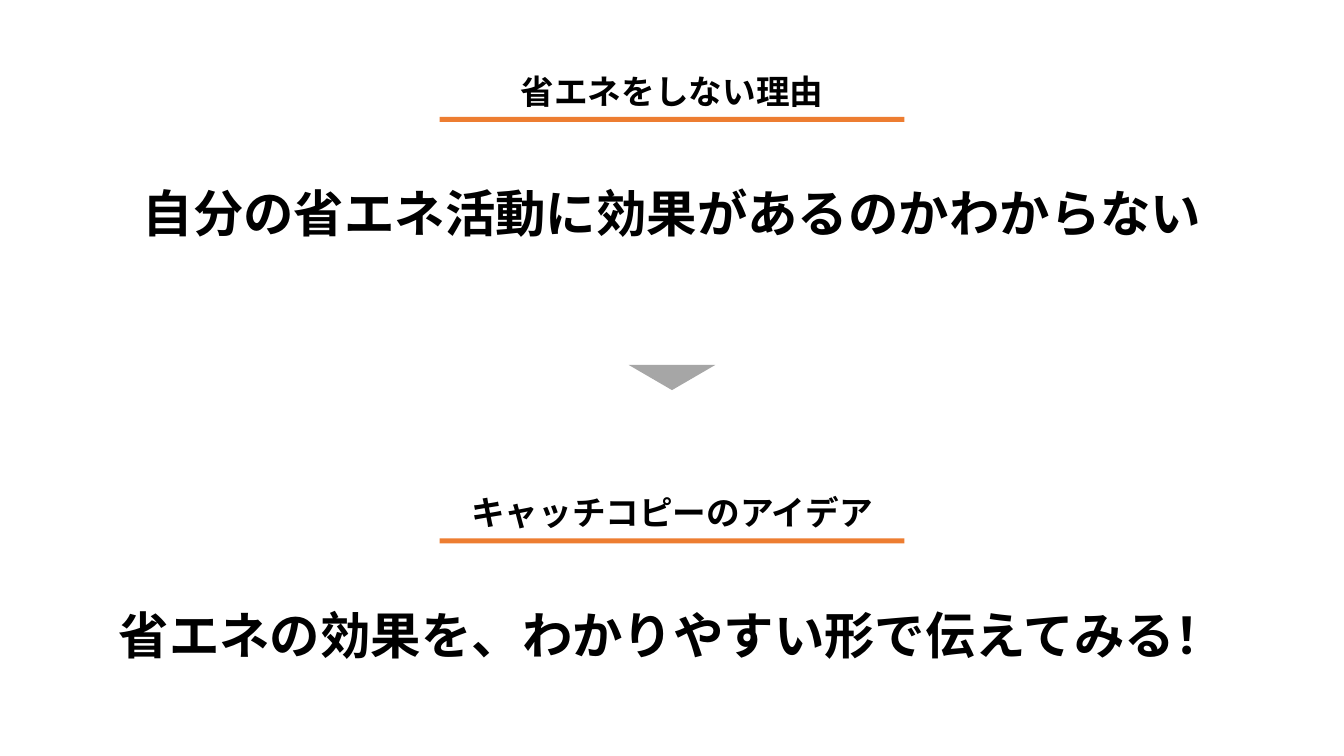
"""Build a slide that leads from a reason for not saving energy to a slogan idea."""
import pptx
import pptx.util
import pptx.dml.color
import pptx.enum.shapes
import pptx.enum.text
import lxml.etree
from pptx.util import Inches

BLACK = pptx.dml.color.RGBColor(0x00, 0x00, 0x00)
ORANGE = pptx.dml.color.RGBColor(0xED, 0x7D, 0x31)
GRAY = pptx.dml.color.RGBColor(0xA6, 0xA6, 0xA6)
FONT = "Noto Sans CJK JP"
SHAPES = pptx.enum.shapes.MSO_SHAPE
WIDTH = 13.33

deck = pptx.Presentation()
deck.slide_width = Inches(WIDTH)
deck.slide_height = Inches(7.5)
slide = deck.slides.add_slide(deck.slide_layouts[6])


def add_text(text, top, width, height, size):
    left = (WIDTH - width) / 2
    box = slide.shapes.add_textbox(Inches(left), Inches(top), Inches(width), Inches(height))
    frame = box.text_frame
    frame.word_wrap = True
    frame.auto_size = pptx.enum.text.MSO_AUTO_SIZE.SHAPE_TO_FIT_TEXT
    line = frame.paragraphs[0]
    line.alignment = pptx.enum.text.PP_ALIGN.CENTER
    run = line.add_run()
    run.text = text
    run.font.size = pptx.util.Pt(size)
    run.font.bold = True
    run.font.color.rgb = BLACK
    run.font.name = FONT
    east = lxml.etree.SubElement(run.font._element, pptx.oxml.ns.qn("a:ea"))
    east.set("typeface", FONT)


def add_form(kind, top, width, height, color):
    left = (WIDTH - width) / 2
    form = slide.shapes.add_shape(kind, Inches(left), Inches(top), Inches(width), Inches(height))
    form.shadow.inherit = False
    form.fill.solid()
    form.fill.fore_color.rgb = color
    form.line.fill.background()
    return form


parts = [
    (0.65, "省エネをしない理由", "自分の省エネ活動に効果があるのかわからない", 11.64),
    (4.83, "キャッチコピーのアイデア", "省エネの効果を、わかりやすい形で伝えてみる！", 13.62),
]
for top, label, claim, width in parts:
    add_text(label, top, 4.61, 0.5, 24)
    add_form(SHAPES.RECTANGLE, top + 0.51, 4.61, 0.05, ORANGE)
    add_text(claim, top + 1.11, width, 0.71, 36)

arrow = add_form(SHAPES.ISOSCELES_TRIANGLE, 3.62, 0.86, 0.25, GRAY)
arrow.rotation = 180

deck.save("out.pptx")
